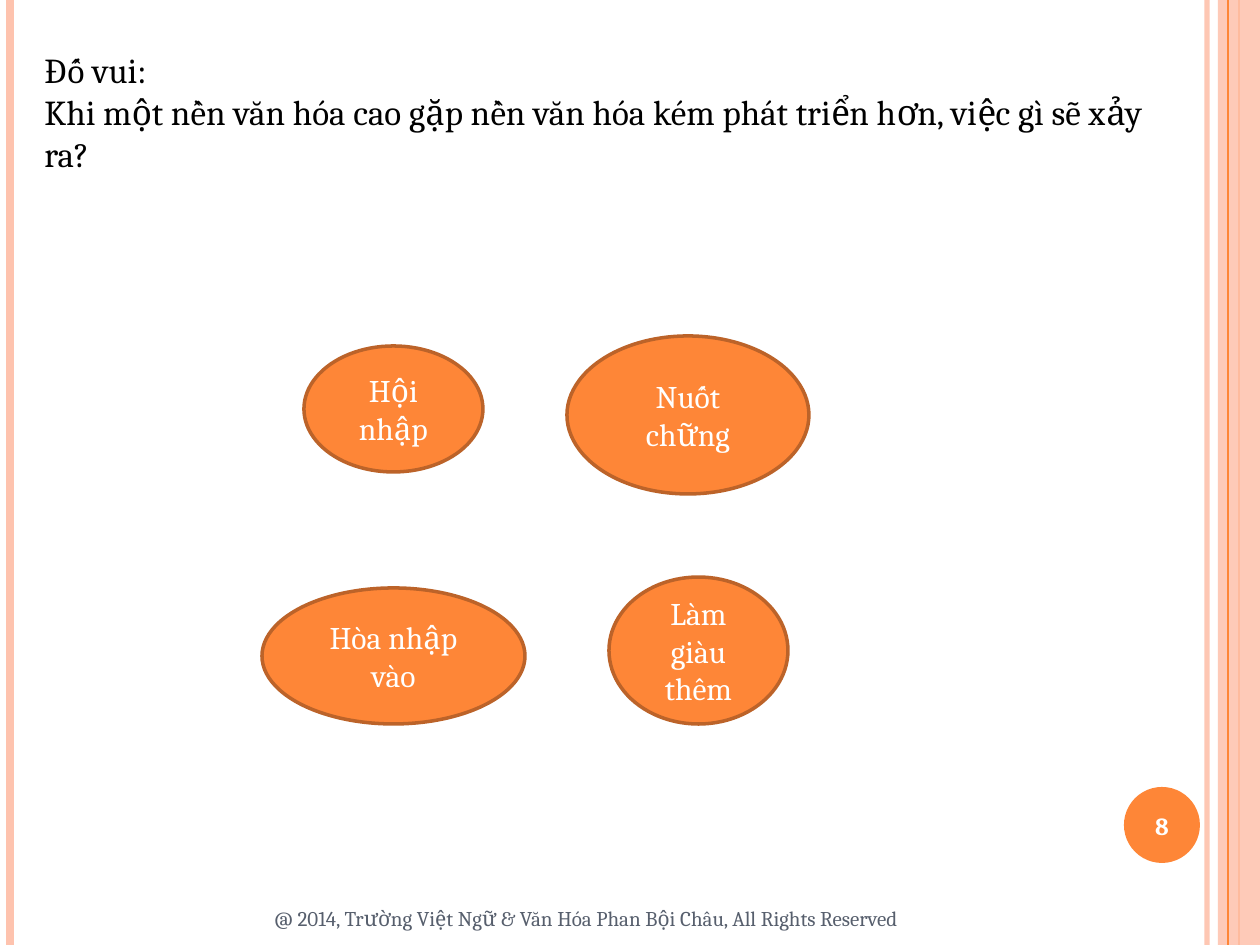
from lxml import etree
from pptx import Presentation
from pptx.dml.color import RGBColor
from pptx.enum.shapes import MSO_CONNECTOR as CONN, MSO_SHAPE as SHAPE
from pptx.enum.text import MSO_ANCHOR as ANCHOR, PP_ALIGN as ALIGN
from pptx.oxml.ns import qn
from pptx.util import Pt

PX = 914400 / 126
W, H = 1260, 945
FONT = "Cambria"
ORANGE = RGBColor(0xFE, 0x86, 0x37)
PEACH = RGBColor(0xFE, 0xC3, 0xAE)
BROWN = RGBColor(0xBC, 0x63, 0x29)
SLATE = RGBColor(0x57, 0x5F, 0x6D)
BLACK = RGBColor(0, 0, 0)
WHITE = RGBColor(255, 255, 255)


def add_shape(kind, box, color):
    sp = s.shapes.add_shape(kind, *[round(v * PX) for v in box])
    sp.shadow.inherit = False
    sp.fill.solid()
    sp.fill.fore_color.rgb = color
    sp.line.fill.background()
    return sp


def write(sp, lines, size, color, align=ALIGN.LEFT, anchor=ANCHOR.MIDDLE, bold=False):
    tf = sp.text_frame
    tf.word_wrap = True
    tf.vertical_anchor = anchor
    tf.text = "\n".join(lines)
    for p in tf.paragraphs:
        p.alignment = align
        p.font.name, p.font.size, p.font.bold = FONT, Pt(size), bold
        p.font.color.rgb = color


prs = Presentation()
prs.slide_width, prs.slide_height = round(W * PX), round(H * PX)
s = prs.slides.add_slide(prs.slide_layouts[6])

# Vertical stripes, with the translucent band between them
band_x = 1218
for x, color, width, alpha in [(1207, PEACH, 3, 93), (10, PEACH, 4.5, 100),
                               (1239, ORANGE, 1.5, 100), (1228, ORANGE, 0.75, 100)]:
    if x == 1228:
        band = add_shape(SHAPE.RECTANGLE, (band_x, 0, W - band_x, H), PEACH)
        clr = next(band._element.spPr.iter(qn("a:srgbClr")))
        etree.SubElement(clr, qn("a:alpha"), val="87000")
    c = s.shapes.add_connector(CONN.STRAIGHT, round(x * PX), 0, round(x * PX), round(H * PX))
    c.line.color.rgb = color
    c.line.width = Pt(width)
    if alpha < 100:
        clr = next(c._element.spPr.iter(qn("a:srgbClr")))
        etree.SubElement(clr, qn("a:alpha"), val=str(alpha * 1000))
    etree.SubElement(c._element.spPr, qn("a:effectLst"))

# Page number disc
add_shape(SHAPE.OVAL, (1124, 787, 76, 76), ORANGE)

# Page number, footer and question
for box, lines, size, color, align, anchor, bold in [
    ((1120, 790, 84, 72), ["8"], 14, WHITE, ALIGN.CENTER, ANCHOR.MIDDLE, True),
    ((262, 904, 698, 29), ["@ 2014, Trường Việt Ngữ & Văn Hóa Phan Bội Châu, All Rights Reserved"],
     12, SLATE, ALIGN.LEFT, ANCHOR.MIDDLE, False),
    ((32, 42, 1124, 140),
     ["Đố vui:", "Khi một nền văn hóa cao gặp nền văn hóa kém phát triển hơn, việc gì sẽ xảy ra?"],
     20, BLACK, ALIGN.LEFT, ANCHOR.TOP, False),
]:
    tb = s.shapes.add_textbox(*[round(v * PX) for v in box])
    write(tb, lines, size, color, align, anchor, bold)

# Answer ovals
for text, box in [
    ("Hội nhập", (304, 346, 179, 126)),
    ("Nuốt chững", (567, 336, 242, 158)),
    ("Hòa nhập vào", (262, 588, 263, 136)),
    ("Làm giàu thêm", (609, 577, 179, 147)),
]:
    sp = add_shape(SHAPE.OVAL, box, ORANGE)
    sp.line.color.rgb = BROWN
    sp.line.width = Pt(2)
    write(sp, [text], 18, WHITE, ALIGN.CENTER)

prs.save("out.pptx")
